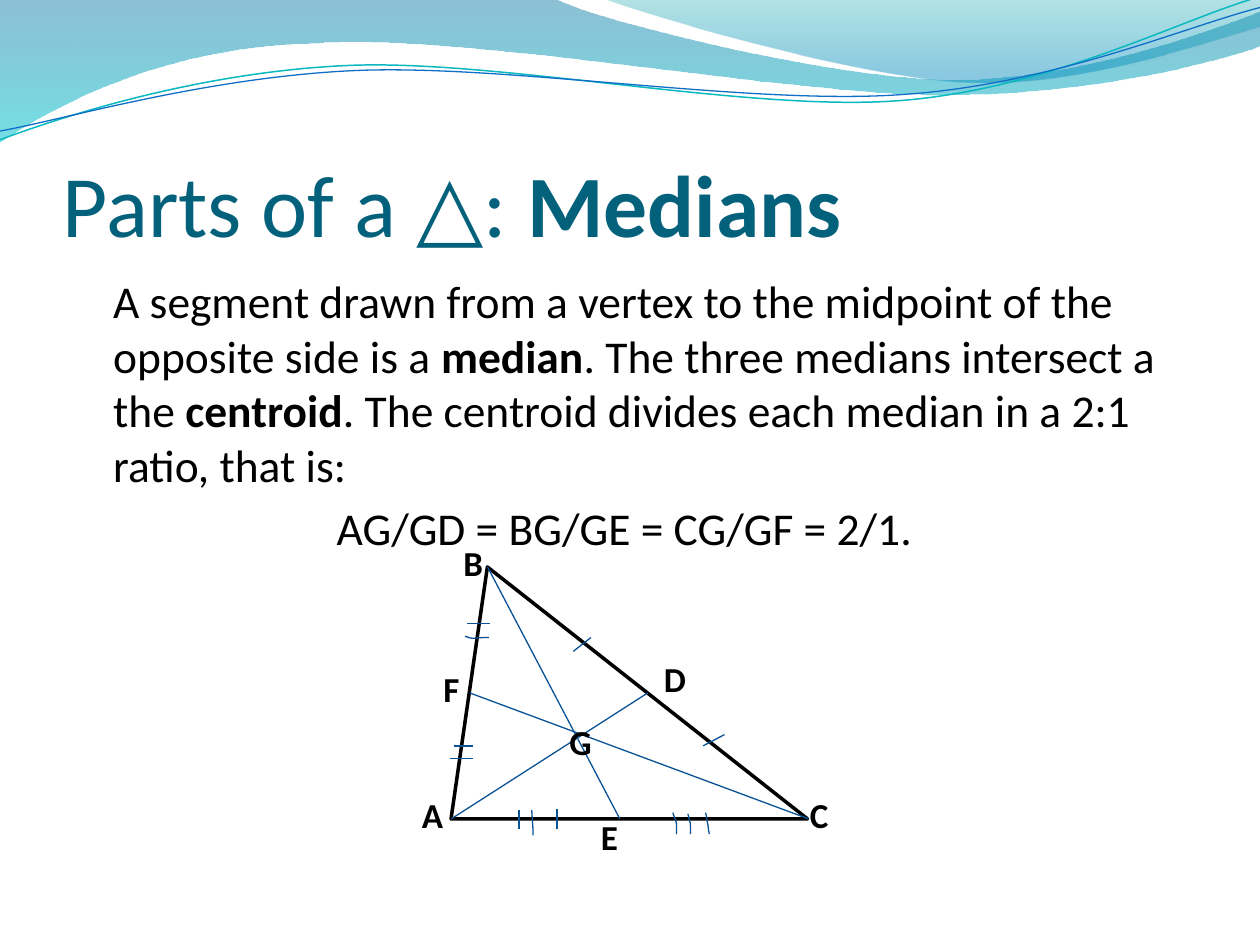
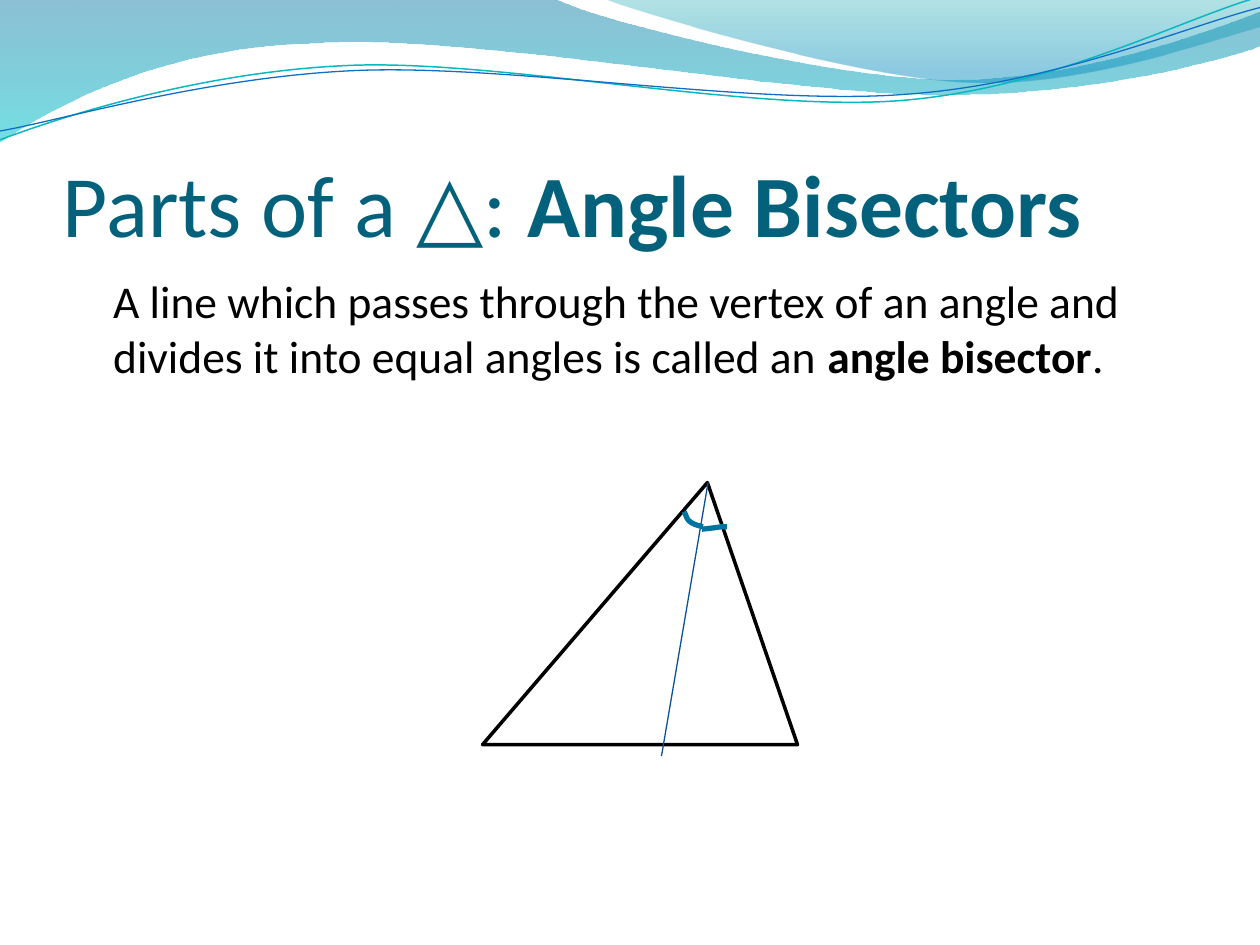
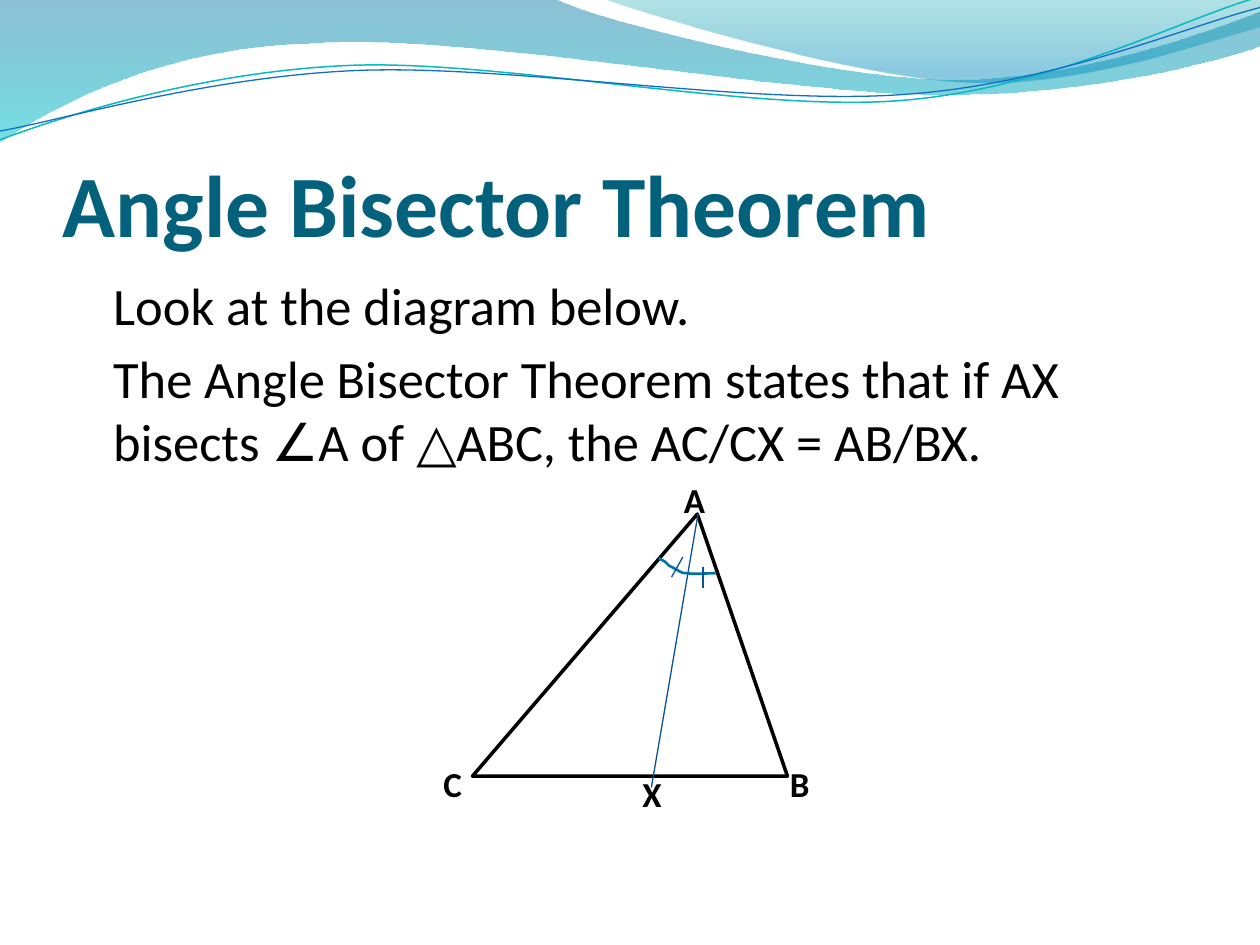
import pptx
import pptx.dml.color
import pptx.enum.shapes
import pptx.enum.text
import pptx.oxml
import pptx.oxml.ns
import pptx.util
from pptx.util import Inches

FONT = "Calibri"
TITLE_COLOR = "04617B"
BLACK = "000000"
WHITE = "FFFFFF"
THIN_BLUE = {"color": "095295", "width": 0.75}
OUTLINE = {"color": BLACK, "width": 2}
ARC_COLOR = "0074A1"

TITLE_FORMAT = {"size": 50, "color": TITLE_COLOR}
LABEL_FORMAT = {"size": 20, "color": BLACK, "bold": True}

# An outline is a start point and steps: two numbers make a straight line,
# six make a curve (two control points and the end).
LEFT_WAVE = [
    (0, 0), (4.4, -0.01),
    (4.76, 0.17, 6.64, 0.63, 7.58, 0.63), (8.53, 0.63, 9.58, 0.26, 10, 0.09),
    (10.01, 0.36),
    (9.83, 0.44, 8.7, 0.76, 7.46, 0.75), (6.22, 0.75, 3.82, 0.28, 2.57, 0.34),
    (1.29, 0.36, 0.46, 0.83, -0.01, 1.13)]
RIGHT_WAVE = [
    (4.79, -0.01),
    (5.09, 0.11, 6.82, 0.62, 7.69, 0.65), (8.56, 0.69, 9.61, 0.32, 10, 0.21),
    (10, 0)]
TEAL_WAVE_LINE = [
    (0, 1.11), (0.48, 0.93, 1.58, 0.57, 2.77, 0.52),
    (3.95, 0.47, 5.93, 0.89, 7.13, 0.8), (8.33, 0.71, 9.38, 0.15, 9.98, -0.02)]
BLUE_WAVE_LINE = [
    (0, 1.04), (0.47, 0.96, 1.64, 0.61, 2.83, 0.56),
    (4.03, 0.51, 5.97, 0.84, 7.17, 0.75), (8.36, 0.67, 9.41, 0.21, 10, 0.06)]


def rgb(value):
    return pptx.dml.color.RGBColor.from_string(value)


def drawing_element(tag, attributes=""):
    return pptx.oxml.parse_xml(
        f'<a:{tag} {pptx.oxml.ns.nsdecls("a")} {attributes}/>')


def set_attributes(target, values):
    for name, value in values.items():
        setattr(target, name, value)


def style_line(line, color, width):
    line.color.rgb = rgb(color)
    line.width = pptx.util.Pt(width)


def add_outline(slide, outline, close):
    """Build a freeform, then join the three points of each curved step."""
    vertices = [(Inches(step[index]), Inches(step[index + 1]))
                for step in outline for index in range(0, len(step), 2)]
    builder = slide.shapes.build_freeform(*vertices[0])
    builder.add_line_segments(vertices[1:], close=close)
    shape = builder.convert_to_shape()
    shape.shadow.inherit = False
    segments = iter(list(shape._element.spPr.iter(pptx.oxml.ns.qn("a:lnTo"))))
    for step in outline[1:]:
        parts = [next(segments) for _ in range(len(step) // 2)]
        if len(parts) == 3:
            curve = drawing_element("cubicBezTo")
            parts[0].addprevious(curve)
            for part in parts:
                curve.append(part[0])
                part.getparent().remove(part)
    return shape


def add_curve(slide, outline, line_format):
    shape = add_outline(slide, outline, close=False)
    shape.fill.background()
    style_line(shape.line, **line_format)


def add_line(slide, start, end, line_format):
    connector = slide.shapes.add_connector(
        pptx.enum.shapes.MSO_CONNECTOR.STRAIGHT,
        *map(Inches, (*start, *end)))
    style_line(connector.line, **line_format)
    connector._element.spPr.append(drawing_element("effectLst"))


def add_wave(slide, outline, stops):
    """Stops are (position, colour, opacity percent), from top to bottom."""
    shape = add_outline(slide, outline, close=True)
    shape.line.fill.background()
    shape.fill.gradient()
    shape.fill.gradient_angle = 270
    for stop, (position, color, _) in zip(shape.fill.gradient_stops, stops):
        stop.position = position
        stop.color.rgb = rgb(color)
    colors = shape._element.spPr.iter(pptx.oxml.ns.qn("a:srgbClr"))
    for element, (_, _, opacity) in zip(colors, stops):
        element.append(drawing_element("alpha", f'val="{opacity * 1000}"'))


def add_band(slide):
    """Draw the waves and move them to the layout that all slides share."""
    add_wave(slide, LEFT_WAVE, [(0, "0074A1", 45), (1, "00C6CF", 55)])
    add_wave(slide, RIGHT_WAVE, [(0, "00A1A9", 30), (0.8, "008BBF", 45)])
    add_curve(slide, TEAL_WAVE_LINE, {"color": "0AB8BF", "width": 0.85})
    add_curve(slide, BLUE_WAVE_LINE, {"color": "0F6FC6", "width": 0.75})
    for shape in list(slide.shapes):
        slide.slide_layout.shapes._spTree.append(shape._element)


def add_run(paragraph, text, size, color, bold=False):
    run = paragraph.add_run()
    run.text = text
    set_attributes(run.font, {"name": FONT, "size": pptx.util.Pt(size), "bold": bold})
    run.font.color.rgb = rgb(color)


def add_text_box(slide, left, top, width, height, **frame_format):
    box = slide.shapes.add_textbox(*map(Inches, (left, top, width, height)))
    set_attributes(box.text_frame, {"word_wrap": True, **frame_format})
    return box.text_frame


def add_title(slide, plain, bold):
    frame = add_text_box(
        slide, 0.5, 0.77, 9, 1.25,
        vertical_anchor=pptx.enum.text.MSO_ANCHOR.BOTTOM,
        margin_left=0, margin_top=Inches(0.05), margin_right=0, margin_bottom=0)
    paragraph = frame.paragraphs[0]
    if plain:
        add_run(paragraph, plain, **TITLE_FORMAT)
    add_run(paragraph, bold, bold=True, **TITLE_FORMAT)


def add_body(slide, size, paragraphs, centered=()):
    """Each paragraph is a list of texts, alternately plain and bold."""
    frame = add_text_box(slide, 0.5, 2.12, 9, 4.8)
    for index, texts in enumerate(paragraphs):
        paragraph = frame.add_paragraph() if index else frame.paragraphs[0]
        paragraph.space_before = pptx.util.Pt(size * 0.18)
        if index in centered:
            paragraph.alignment = pptx.enum.text.PP_ALIGN.CENTER
        else:
            paragraph._p.get_or_add_pPr().set("marL", str(Inches(0.3)))
        for position, text in enumerate(texts):
            add_run(paragraph, text, size, BLACK, bold=position % 2 == 1)


def add_labels(slide, labels):
    for letter, (left, top) in labels.items():
        frame = add_text_box(slide, left, top, 0.42, 0.44)
        add_run(frame.paragraphs[0], letter, **LABEL_FORMAT)


def add_triangle(slide, left, top, width, height, apex):
    """Apex is the place of the top corner as a share of the width."""
    shape = slide.shapes.add_shape(
        pptx.enum.shapes.MSO_SHAPE.ISOSCELES_TRIANGLE,
        *map(Inches, (left, top, width, height)))
    shape.adjustments[0] = apex
    shape.shadow.inherit = False
    shape.fill.solid()
    shape.fill.fore_color.rgb = rgb(WHITE)
    style_line(shape.line, **OUTLINE)


def add_bisected_triangle(slide, left, top):
    add_triangle(slide, left, top, 2.5, 2.08, 0.714)
    add_line(slide, (left + 1.79, top), (left + 1.42, top + 2.17), THIN_BLUE)


def fill_medians_slide(slide):
    add_title(slide, "Parts of a △: ", "Medians")
    add_body(slide, 26, [
        ["A segment drawn from a vertex to the midpoint of the opposite side is a ",
         "median", ". The three medians intersect a the ", "centroid",
         ". The centroid divides each median in a 2:1 ratio, that is:"],
        ["AG/GD = BG/GE = CG/GF = 2/1. "],
    ], centered=(1,))

    add_triangle(slide, 3.58, 4.5, 2.83, 2, 0.102)
    medians = [((3.87, 4.5), (4.92, 6.5)),
               ((3.58, 6.5), (5.14, 5.5)),
               ((6.42, 6.5), (3.73, 5.5))]
    for vertex, midpoint in medians:
        add_line(slide, vertex, midpoint, THIN_BLUE)
    add_labels(slide, {
        "G": (4.42, 5.67), "A": (3.25, 6.25), "E": (4.67, 6.42), "C": (6.33, 6.25),
        "D": (5.17, 5.17), "B": (3.58, 4.25), "F": (3.42, 5.25)})

    for start, end in [((5.58, 5.92), (5.75, 5.83)), ((4.42, 6.42), (4.42, 6.58))]:
        add_line(slide, start, end, THIN_BLUE)
    hand_drawn_ticks = [
        [(4.55, 5.17), (4.69, 5.06)],
        [(4.12, 6.43), (4.12, 6.58)],
        [(4.22, 6.43), (4.23, 6.6, 4.23, 6.53, 4.23, 6.63)],
        [(5.34, 6.45), (5.35, 6.48, 5.37, 6.52, 5.37, 6.55),
         (5.37, 6.57, 5.37, 6.59, 5.37, 6.62)],
        [(5.46, 6.46), (5.48, 6.55, 5.48, 6.5, 5.48, 6.62)],
        [(5.6, 6.45), (5.61, 6.48, 5.61, 6.52, 5.62, 6.55),
         (5.62, 6.57, 5.63, 6.62, 5.63, 6.62)],
        [(3.69, 5.05), (3.78, 5.08, 3.72, 5.06, 3.88, 5.06)],
        [(3.71, 4.95), (3.89, 4.95)],
        [(3.57, 6.02), (3.75, 6.02)],
        [(3.6, 5.92), (3.75, 5.92)]]
    for tick in hand_drawn_ticks:
        add_curve(slide, tick, THIN_BLUE)


def fill_bisectors_slide(slide):
    add_title(slide, "Parts of a △: ", "Angle Bisectors")
    add_body(slide, 26, [
        ["A line which passes through the vertex of an angle and divides it into "
         "equal angles is called an ", "angle bisector", "."]])
    add_bisected_triangle(slide, 3.83, 3.83)
    angle_arcs = [
        [(5.43, 4.06), (5.45, 4.1, 5.45, 4.13, 5.49, 4.15),
         (5.52, 4.17, 5.58, 4.18, 5.58, 4.18)],
        [(5.57, 4.2), (5.76, 4.18, 5.69, 4.18, 5.77, 4.18)]]
    for arc in angle_arcs:
        add_curve(slide, arc, {"color": ARC_COLOR, "width": 3})


def fill_theorem_slide(slide):
    add_title(slide, "", "Angle Bisector Theorem")
    add_body(slide, 30, [
        ["Look at the diagram below."],
        ["The Angle Bisector Theorem states that if AX bisects ∠A of △ABC, "
         "the AC/CX = AB/BX."]])
    add_bisected_triangle(slide, 3.75, 4.08)
    add_labels(slide, {"A": (5.33, 3.75), "C": (3.42, 6), "B": (6.17, 6), "X": (5, 6.08)})
    angle_arc = [
        (5.23, 4.43), (5.25, 4.44, 5.26, 4.45, 5.28, 4.46),
        (5.29, 4.47, 5.3, 4.48, 5.31, 4.49), (5.32, 4.5, 5.34, 4.5, 5.35, 4.51),
        (5.39, 4.53, 5.4, 4.55, 5.45, 4.55), (5.52, 4.56, 5.6, 4.55, 5.68, 4.55)]
    add_curve(slide, angle_arc, {"color": ARC_COLOR, "width": 1.5})
    for start, end in [((5.42, 4.42), (5.33, 4.58)), ((5.58, 4.5), (5.58, 4.67))]:
        add_line(slide, start, end, THIN_BLUE)


def main():
    presentation = pptx.Presentation()
    set_attributes(presentation, {"slide_width": Inches(10), "slide_height": Inches(7.5)})
    blank_layout = presentation.slide_layouts[6]
    fillers = [fill_medians_slide, fill_bisectors_slide, fill_theorem_slide]
    slides = [presentation.slides.add_slide(blank_layout) for _ in fillers]
    add_band(slides[0])
    for slide, fill_slide in zip(slides, fillers):
        fill_slide(slide)
    presentation.save("out.pptx")


if __name__ == "__main__":
    main()
